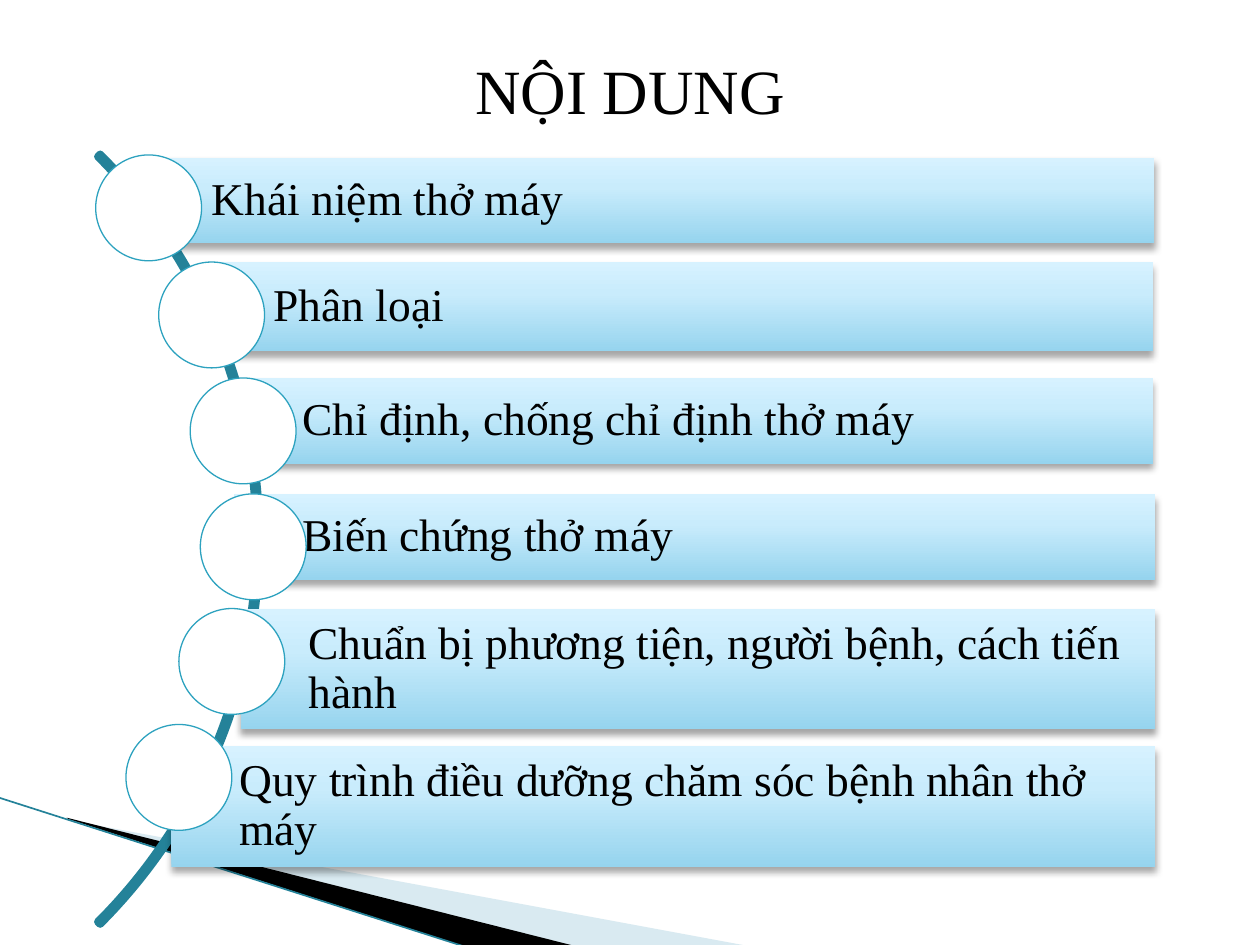
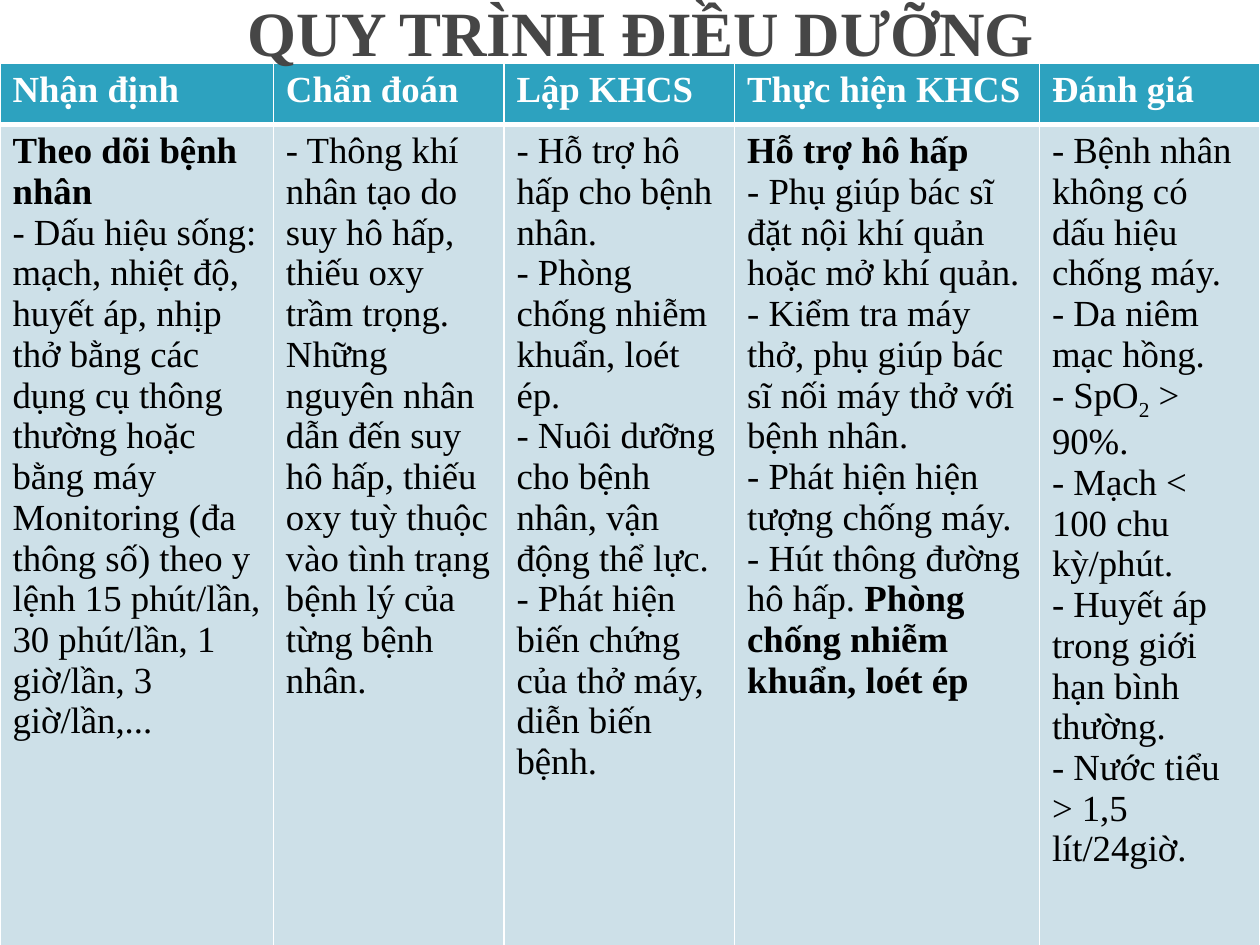
from copy import deepcopy

from lxml.etree import SubElement
from pptx import Presentation
from pptx.dml.color import RGBColor
from pptx.enum.shapes import MSO_CONNECTOR, MSO_SHAPE
from pptx.enum.text import MSO_ANCHOR, PP_ALIGN
from pptx.oxml.ns import qn
from pptx.util import Inches, Pt

BLACK = RGBColor(0x00, 0x00, 0x00)
WHITE = RGBColor(0xFF, 0xFF, 0xFF)
GREY = RGBColor(0x46, 0x46, 0x46)
TEAL = RGBColor(0x2D, 0xA2, 0xBF)
DARK_TEAL = RGBColor(0x24, 0x82, 0x99)
PALE_BLUE = RGBColor(0xA0, 0xCB, 0xDC)
CELL_BLUE = RGBColor(0xCD, 0xE0, 0xE8)
BAR_STOPS = [
    (0, RGBColor(0x96, 0xD4, 0xEE)),
    (0.65, RGBColor(0xC9, 0xEC, 0xFC)),
    (1, RGBColor(0xD7, 0xF2, 0xFF)),
]
FONT = "Times New Roman"


def format_font(font, color, **values):
    for name, value in {"name": FONT, **values}.items():
        setattr(font, name, value)
    font.color.rgb = color


def set_title(slide, text, box, color, bold):
    title = slide.shapes.title
    for name, value in zip(("left", "top", "width", "height"), box):
        setattr(title, name, Inches(value))
    title.text_frame.text = text
    title.text_frame.vertical_anchor = MSO_ANCHOR.MIDDLE
    paragraph = title.text_frame.paragraphs[0]
    paragraph.alignment = PP_ALIGN.CENTER
    format_font(paragraph.runs[0].font, color, size=Pt(36), bold=bold)
    return title


presentation = Presentation()
presentation.slide_width = Inches(10)
presentation.slide_height = Inches(7.5)
layout = presentation.slide_layouts[5]
contents_slide = presentation.slides.add_slide(layout)
process_slide = presentation.slides.add_slide(layout)

corner_wedges = [
    (PALE_BLUE, [(0.55, 6.51), (5.95, 7.51), (4.56, 7.51), (0.55, 6.5)]),
    (BLACK, [(0.53, 6.49), (4.57, 7.51), (3.72, 7.52), (0.54, 6.5)]),
]
corner_shapes = []
for color, points in corner_wedges:
    corners = [(Inches(x), Inches(y)) for x, y in points]
    builder = contents_slide.shapes.build_freeform(*corners[0], scale=1.0)
    builder.add_line_segments(corners[1:], close=True)
    wedge = builder.convert_to_shape()
    wedge.shadow.inherit = False
    wedge.fill.solid()
    wedge.fill.fore_color.rgb = color
    wedge.line.fill.background()
    corner_shapes.append(wedge)
pale_color = corner_shapes[0]._element.spPr.find(".//" + qn("a:srgbClr"))
SubElement(pale_color, qn("a:alpha"), val="40000")
corner_line = contents_slide.shapes.add_connector(
    MSO_CONNECTOR.STRAIGHT, Inches(-0.01), Inches(6.33), Inches(3.71), Inches(7.52)
)
corner_line.line.color.rgb = DARK_TEAL
corner_line.line.width = Pt(0.95)
SubElement(corner_line._element.spPr, qn("a:effectLst"))
corner_shapes.append(corner_line)
for position, shape in enumerate(corner_shapes):
    layout.shapes._spTree.insert(2 + position, shape._element)

set_title(contents_slide, "NỘI DUNG", (0.5, 0, 9, 1.42), BLACK, False)

arc = contents_slide.shapes.add_shape(
    MSO_SHAPE.BLOCK_ARC, Inches(-6.58), Inches(-0.04), Inches(8.64), Inches(8.64)
)
for position, value in enumerate((189, 27, 0.003)):
    arc.adjustments[position] = value
arc.shadow.inherit = False
arc.fill.background()
arc.line.color.rgb = DARK_TEAL
arc.line.width = Pt(4.33)

topics = [
    ("Khái niệm thở máy", (1.14, 1.25, 8.02, 0.68), (0.76, 1.23)),
    ("Phân loại", (1.63, 2.08, 7.52, 0.71), (1.26, 2.08)),
    ("Chỉ định, chống chỉ định thở máy", (1.86, 3, 7.29, 0.68), (1.51, 3)),
    ("Biến chứng thở máy", (1.86, 3.92, 7.31, 0.68), (1.59, 3.92)),
    ("Chuẩn bị phương tiện, người bệnh, cách tiến hành", (1.91, 4.83, 7.26, 0.96), (1.42, 4.83)),
    ("Quy trình điều dưỡng chăm sóc bệnh nhân thở máy", (1.36, 5.92, 7.81, 0.96), (1, 5.75)),
]
for text, bar_box, circle_corner in topics:
    bar = contents_slide.shapes.add_shape(MSO_SHAPE.RECTANGLE, *map(Inches, bar_box))
    bar.fill.gradient()
    bar.fill.gradient_angle = 90
    stop_list = bar._element.spPr.find(".//" + qn("a:gsLst"))
    stop_list.append(deepcopy(stop_list[0]))
    for stop, (position, color) in zip(bar.fill.gradient_stops, BAR_STOPS):
        stop.position = position
        stop.color.rgb = color
    bar.line.fill.background()
    bar.shadow.inherit = False
    shadow = SubElement(
        bar._element.spPr.find(qn("a:effectLst")), qn("a:outerShdw"),
        blurRad=str(Pt(4)), dist=str(Pt(3)), dir="5400000", rotWithShape="0",
    )
    shadow_color = SubElement(shadow, qn("a:srgbClr"), val=str(BLACK))
    SubElement(shadow_color, qn("a:alpha"), val="35000")

    frame = bar.text_frame
    frame.word_wrap = True
    frame.vertical_anchor = MSO_ANCHOR.MIDDLE
    frame.margin_left = Inches(0.54)
    frame.margin_top = frame.margin_right = frame.margin_bottom = Inches(0.07)
    frame.text = text
    paragraph = frame.paragraphs[0]
    paragraph.alignment = PP_ALIGN.LEFT
    paragraph.line_spacing = 0.9
    format_font(paragraph.runs[0].font, BLACK, size=Pt(26))

    circle = contents_slide.shapes.add_shape(
        MSO_SHAPE.OVAL, *map(Inches, circle_corner), Inches(0.84), Inches(0.84)
    )
    circle.shadow.inherit = False
    circle.fill.solid()
    circle.fill.fore_color.rgb = WHITE
    circle.line.color.rgb = TEAL
    circle.line.width = Pt(0.75)

BOLD = {"bold": True}
PLAIN = {"bold": False}
steps = [
    ("Nhận định", 2.17, [
        [("Theo dõi bệnh nhân", BOLD)],
        [("- Dấu hiệu sống: mạch, nhiệt độ, huyết áp, nhịp thở bằng các dụng cụ thông thường "
          "hoặc bằng máy Monitoring (đa thông số) theo y lệnh 15 phút/lần, 30 phút/lần, "
          "1 giờ/lần, 3 giờ/lần,...", PLAIN)],
    ]),
    ("Chẩn đoán", 1.83, [
        [("- Thông khí nhân tạo do suy hô hấp, thiếu oxy trầm trọng. Những nguyên nhân dẫn đến "
          "suy hô hấp, thiếu oxy tuỳ thuộc vào tình trạng bệnh lý của từng bệnh nhân.", PLAIN)],
    ]),
    ("Lập KHCS", 1.83, [
        [("- Hỗ trợ hô hấp cho bệnh nhân.", PLAIN)],
        [("- Phòng chống nhiễm khuẩn, loét ép.", PLAIN)],
        [("- Nuôi dưỡng cho bệnh nhân, vận động thể lực.", PLAIN)],
        [("- Phát hiện biến chứng của thở máy, diễn biến bệnh.", PLAIN)],
    ]),
    ("Thực hiện KHCS", 2.42, [
        [("Hỗ trợ hô hấp", BOLD)],
        [("- Phụ giúp bác sĩ đặt nội khí quản hoặc mở khí quản.", PLAIN)],
        [("- Kiểm tra máy thở, phụ giúp bác sĩ nối máy thở với bệnh nhân.", PLAIN)],
        [("- Phát hiện hiện tượng chống máy.", PLAIN)],
        [("- Hút thông đường hô hấp. ", PLAIN), ("Phòng chống nhiễm khuẩn, loét ép", BOLD)],
    ]),
    ("Đánh giá", 1.75, [
        [("- Bệnh nhân không có dấu hiệu chống máy.", PLAIN)],
        [("- Da niêm mạc hồng.", PLAIN)],
        [("- SpO", PLAIN), ("2", {"bold": False, "baseline": -25000}), (" > 90%.", PLAIN)],
        [("- Mạch < 100 chu kỳ/phút.", PLAIN)],
        [("- Huyết áp trong giới hạn bình thường.", PLAIN)],
        [("- Nước tiểu > 1,5 lít/24giờ.", PLAIN)],
    ]),
]
table = process_slide.shapes.add_table(
    2, len(steps), Inches(0), Inches(0.5), Inches(10), Inches(7.87)
).table
table.horz_banding = False
for row, height in zip(table.rows, (0.49, 7.38)):
    row.height = Inches(height)

for column, (heading, width, details) in enumerate(steps):
    table.columns[column].width = Inches(width)
    row_contents = [
        ([[(heading, BOLD)]], WHITE, TEAL, {"L": 1, "R": 1, "T": 1, "B": 3}),
        (details, BLACK, CELL_BLUE, {"L": 1, "R": 1, "T": 3, "B": 1}),
    ]
    for row, (paragraphs, text_color, fill_color, borders) in enumerate(row_contents):
        cell = table.cell(row, column)
        cell_properties = cell._tc.get_or_add_tcPr()
        for side, points in borders.items():
            border = SubElement(cell_properties, qn("a:ln" + side), w=str(Pt(points)))
            border_fill = SubElement(border, qn("a:solidFill"))
            SubElement(border_fill, qn("a:srgbClr"), val=str(WHITE))
        cell.fill.solid()
        cell.fill.fore_color.rgb = fill_color
        frame = cell.text_frame
        for position, runs in enumerate(paragraphs):
            paragraph = frame.add_paragraph() if position else frame.paragraphs[0]
            for text, style in runs:
                run = paragraph.add_run()
                run.text = text
                format_font(run.font, text_color, size=Pt(21), bold=style["bold"])
                if "baseline" in style:
                    run._r.get_or_add_rPr().set("baseline", str(style["baseline"]))

process_title = set_title(
    process_slide, "QUY TRÌNH ĐIỀU DƯỠNG", (0.25, 0, 9.67, 0.5), GREY, True
)
process_slide.shapes._spTree.append(process_title._element)

presentation.save("out.pptx")
